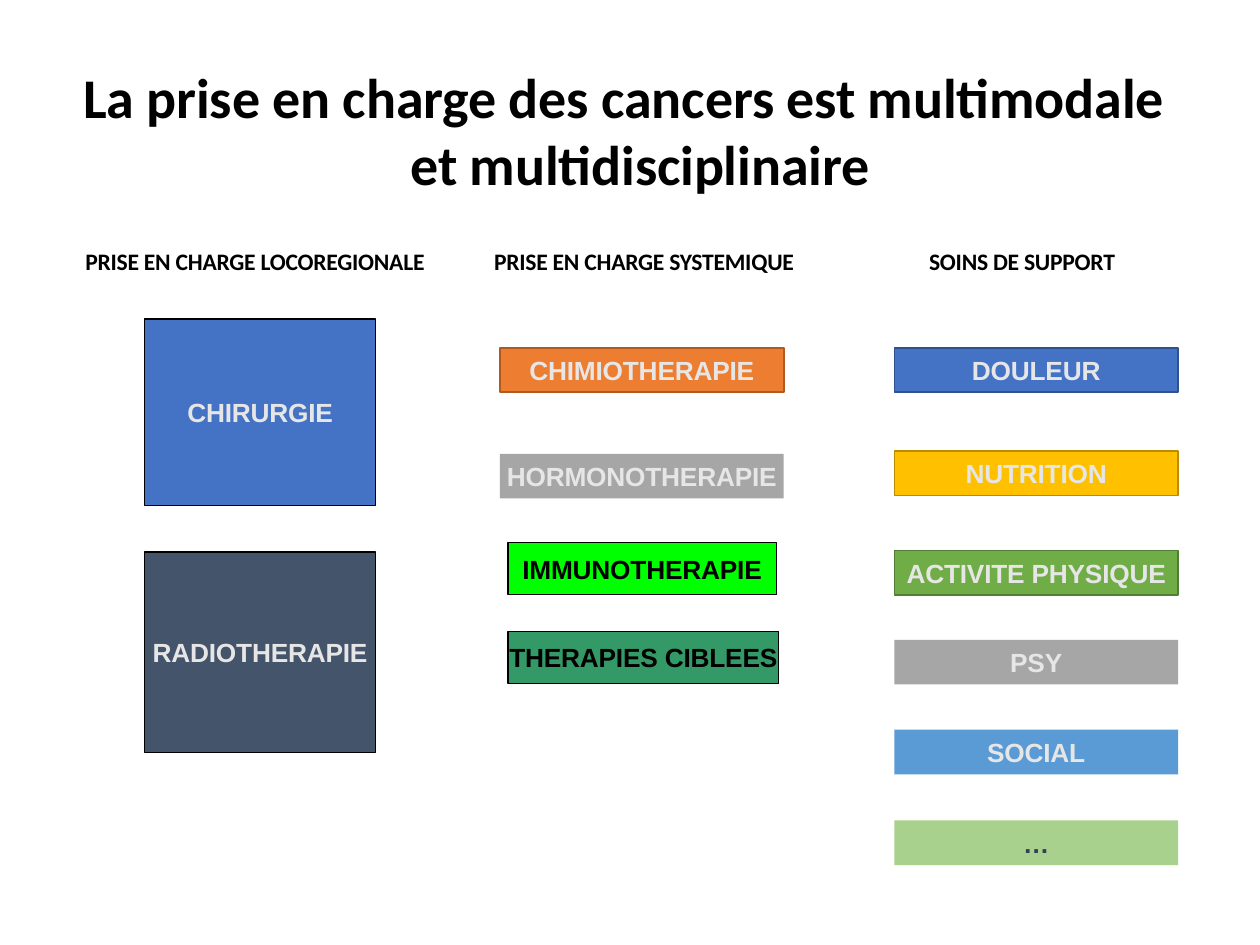
from collections import namedtuple

from pptx import Presentation
from pptx.dml.color import RGBColor
from pptx.enum.shapes import MSO_SHAPE as Preset
from pptx.enum.text import MSO_ANCHOR as Anchor, PP_ALIGN as Align
from pptx.util import Cm, Pt

BLACK = RGBColor(0x00, 0x00, 0x00)
PALE = RGBColor(0xE7, 0xE6, 0xE6)
INK = RGBColor(0x33, 0x3F, 0x50)
BLUE = RGBColor(0x44, 0x72, 0xC4)
DARK_BLUE = RGBColor(0x2F, 0x52, 0x8F)
SLATE = RGBColor(0x44, 0x54, 0x6A)
SKY = RGBColor(0x5B, 0x9B, 0xD5)
ORANGE = RGBColor(0xED, 0x7D, 0x31)
DARK_ORANGE = RGBColor(0xAE, 0x5A, 0x21)
GREY = RGBColor(0xA6, 0xA6, 0xA6)
LIME = RGBColor(0x00, 0xFF, 0x00)
SEA_GREEN = RGBColor(0x33, 0x99, 0x66)
GOLD = RGBColor(0xFF, 0xC0, 0x00)
DARK_GOLD = RGBColor(0xBC, 0x8C, 0x00)
GREEN = RGBColor(0x70, 0xAD, 0x47)
DARK_GREEN = RGBColor(0x50, 0x7E, 0x32)
LIGHT_GREEN = RGBColor(0xA9, 0xD1, 0x8E)

Box = namedtuple("Box", "left top width height")
Care = namedtuple("Care", "label box fill line color", defaults=(None, PALE))

TITLE_FONT = {"name": "Calibri", "size": Pt(32), "bold": True}
HEADING_FONT = {"name": "Calibri", "size": Pt(13.5), "bold": True}
CARE_FONT = {"name": "Arial", "size": Pt(15), "bold": True}
FRAME = {"margin_left": 0, "margin_right": 0, "margin_top": 0, "margin_bottom": 0}


def set_values(target, values):
    for name, value in values.items():
        setattr(target, name, value)


def lengths(box):
    return [Cm(value) for value in box]


def write(shape, text, font, color, align, **frame):
    set_values(shape.text_frame, FRAME | frame)
    para = shape.text_frame.paragraphs[0]
    para.alignment = align
    span = para.add_run()
    span.text = text
    set_values(span.font, font)
    span.font.color.rgb = color
    span.font._element.set("spc", "-10")
    return para


def add_title(page, text, box, hanging):
    shape = page.shapes.add_textbox(*lengths(box))
    para = write(shape, text, TITLE_FONT, BLACK, Align.LEFT, word_wrap=True)
    properties = para._p.get_or_add_pPr()
    properties.set("marL", str(Cm(hanging)))
    properties.set("indent", str(-Cm(hanging)))


def add_care(page, care, box):
    shape = page.shapes.add_shape(Preset.RECTANGLE, *lengths(box))
    shape.shadow.inherit = False
    shape.fill.solid()
    shape.fill.fore_color.rgb = care.fill
    if care.line is None:
        shape.line.fill.background()
    else:
        shape.line.color.rgb = care.line
        shape.line.width = Pt(0.72 if care.line == BLACK else 0.96)
    write(shape, care.label, CARE_FONT, care.color, Align.CENTER,
          word_wrap=False, vertical_anchor=Anchor.MIDDLE)


def add_column(page, box, heading, inset, cares):
    place = Box(box.left + inset, box.top, box.width - inset, 0.64)
    shape = page.shapes.add_textbox(*lengths(place))
    write(shape, heading, HEADING_FONT, BLACK, Align.LEFT, word_wrap=True)
    for care in cares:
        left, top, width, height = care.box
        add_care(page, care, Box(box.left + left, box.top + top, width, height))


def wide_box(left, top):
    return Box(left, top, 5.72, 0.9)


LOCAL = [
    Care("CHIRURGIE", Box(1.2, 1.45, 4.65, 3.76), BLUE, BLACK),
    Care("RADIOTHERAPIE", Box(1.2, 6.15, 4.65, 4.04), SLATE, BLACK),
]
SYSTEMIC = [
    Care("CHIMIOTHERAPIE", wide_box(0.12, 2.03), ORANGE, DARK_ORANGE),
    Care("HORMONOTHERAPIE", wide_box(0.12, 4.17), GREY),
    Care("IMMUNOTHERAPIE", Box(0.28, 5.96, 5.41, 1.05), LIME, BLACK, BLACK),
    Care("THERAPIES CIBLEES", Box(0.28, 7.75, 5.46, 1.05), SEA_GREEN, BLACK, BLACK),
]
SUPPORT = [
    Care("DOULEUR", wide_box(0, 2.03), BLUE, DARK_BLUE),
    Care("NUTRITION", wide_box(0, 4.11), GOLD, DARK_GOLD),
    Care("ACTIVITE PHYSIQUE", wide_box(0, 6.12), GREEN, DARK_GREEN),
    Care("PSY", wide_box(0, 7.92), GREY),
    Care("SOCIAL", wide_box(0, 9.73), SKY),
    Care("…", wide_box(0, 11.56), LIGHT_GREEN, None, INK),
]


def main():
    deck = Presentation()
    deck.slide_width, deck.slide_height = Cm(25.4), Cm(19.05)
    page = deck.slides.add_slide(deck.slide_layouts[6])
    add_title(page, "La prise en charge des cancers est multimodale et multidisciplinaire",
              Box(1.68, 1.26, 22.1, 2.8), 6.6)
    add_column(page, Box(1.72, 4.98, 7.1, 14), "PRISE EN CHARGE LOCOREGIONALE", 0, LOCAL)
    add_column(page, Box(9.96, 4.98, 6.3, 14), "PRISE EN CHARGE SYSTEMIQUE", 0, SYSTEMIC)
    add_column(page, Box(18.03, 4.98, 5.72, 14), "SOINS DE SUPPORT", 0.7, SUPPORT)
    deck.save("out.pptx")


if __name__ == "__main__":
    main()
